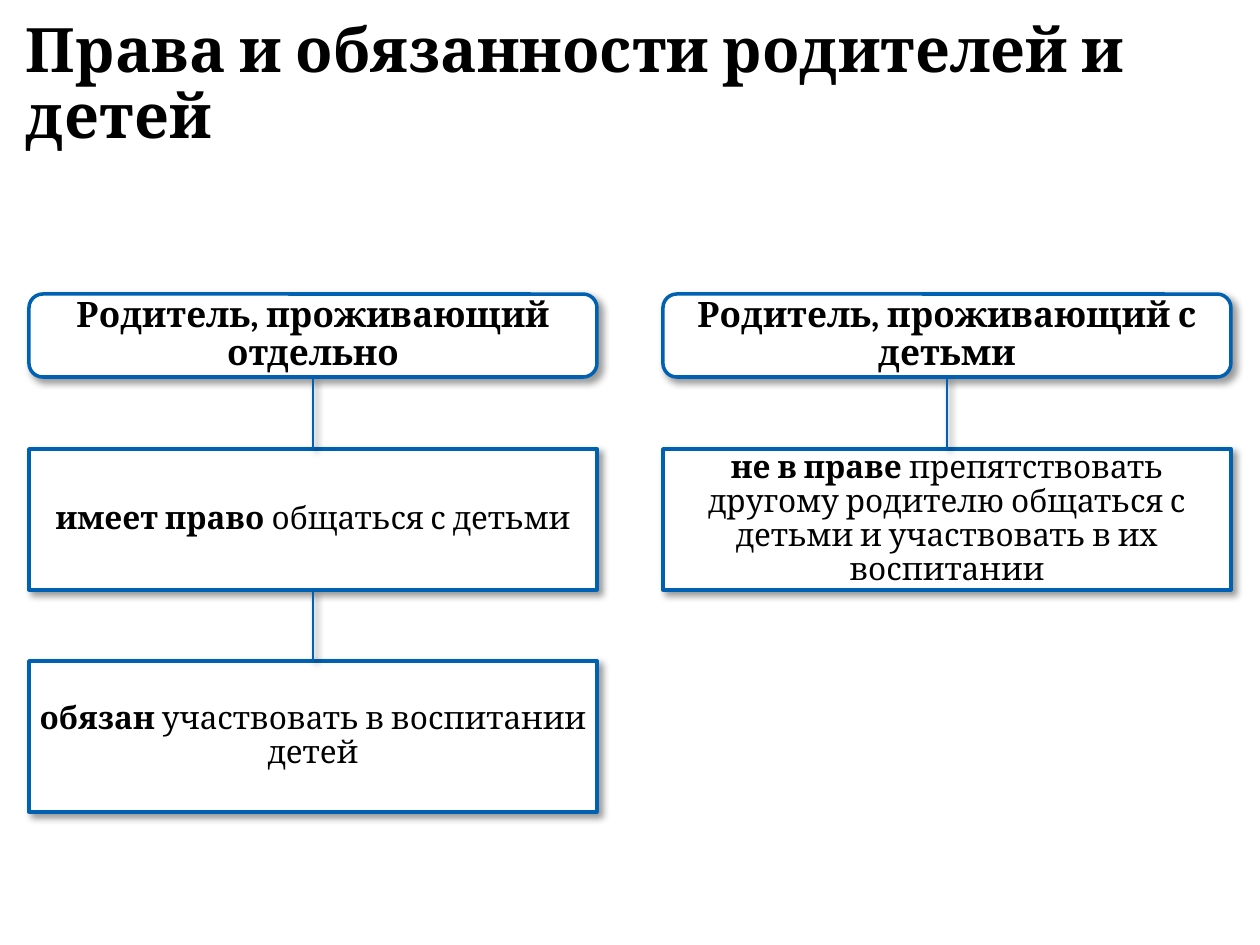
from lxml import etree
from pptx import Presentation
from pptx import util as u
from pptx.dml.color import RGBColor
from pptx.enum import shapes, text
from pptx.oxml.ns import qn

PX = u.Inches(1) / 126
FONT = "Cambria"
COLORS = {"ink": "000000", "border": "0061B2", "card": "FFFFFF"}

CARD_WIDTH = 568
COLUMN_LEFTS = (29, 663)
HEADING_ROW = (294, 83)
ROWS = (HEADING_ROW, (449, 141), (661, 151))

# Each column: a heading, then rules as (bold part, plain part)
COLUMNS = (
    (
        ("Родитель, проживающий отдельно", ""),
        ("имеет право ", "общаться с детьми"),
        ("обязан", " участвовать в воспитании детей"),
    ),
    (
        ("Родитель, проживающий с детьми", ""),
        ("не в праве ", "препятствовать другому родителю общаться "
                        "с детьми и участвовать в их воспитании"),
    ),
)


def px(*lengths):
    return [u.Emu(round(length * PX)) for length in lengths]


def color(name):
    return RGBColor.from_string(COLORS[name])


def add_shadow(effects):
    """Fill an a:effectLst with the soft shadow used by boxes, lines and text."""
    shadow = etree.SubElement(
        effects, qn("a:outerShdw"), blurRad=str(u.Pt(4)), dist=str(u.Pt(3)),
        dir=str(45 * 60000), algn="tl", rotWithShape="0")
    shade = etree.SubElement(shadow, qn("a:srgbClr"), val=COLORS["ink"])
    etree.SubElement(shade, qn("a:alpha"), val="40000")


def style_run(run, size, bold):
    run.font.size = u.Pt(size)
    run.font.bold = bold
    run.font.name = FONT
    run.font.color.rgb = color("ink")
    properties = run.font._element
    effects = etree.Element(qn("a:effectLst"))
    add_shadow(effects)
    properties.find(qn("a:solidFill")).addnext(effects)


def style_line(line, width):
    line.color.rgb = color("border")
    line.width = u.Pt(width)


def add_title(slide, wording):
    title = slide.shapes.title
    title.left, title.top, title.width, title.height = px(26, 13, 1227, 117)
    frame = title.text_frame
    frame.text = wording
    frame.word_wrap = True
    frame.auto_size = text.MSO_AUTO_SIZE.NONE
    frame.vertical_anchor = text.MSO_ANCHOR.TOP
    frame.margin_left = frame.margin_right = 0
    paragraph = frame.paragraphs[0]
    paragraph.alignment = text.PP_ALIGN.LEFT
    paragraph.line_spacing = 0.9
    style_run(paragraph.runs[0], 35, True)


def add_card(slide, left, row, wording):
    is_heading = row == HEADING_ROW
    outline = (shapes.MSO_SHAPE.ROUNDED_RECTANGLE if is_heading
               else shapes.MSO_SHAPE.RECTANGLE)
    top, height = row
    card = slide.shapes.add_shape(outline, *px(left, top, CARD_WIDTH, height))
    card.fill.solid()
    card.fill.fore_color.rgb = color("card")
    style_line(card.line, 2)
    card.shadow.inherit = False
    add_shadow(card._element.spPr.find(qn("a:effectLst")))

    frame = card.text_frame
    frame.word_wrap = True
    frame.vertical_anchor = text.MSO_ANCHOR.MIDDLE
    frame.margin_left, frame.margin_top, frame.margin_right, frame.margin_bottom = px(1, 1, 1, 1)
    paragraph = frame.paragraphs[0]
    paragraph.alignment = text.PP_ALIGN.CENTER
    paragraph.line_spacing = 0.9
    for part, bold in zip(wording, (True, False)):
        if part:
            run = paragraph.add_run()
            run.text = part
            style_run(run, 20 if is_heading else 18, bold)
    return card


def join_cards(slide, upper, lower):
    link = slide.shapes.add_connector(shapes.MSO_CONNECTOR.STRAIGHT, 0, 0, 0, 0)
    link.begin_connect(upper, 2)
    link.end_connect(lower, 0)
    style_line(link.line, 1.5)
    add_shadow(etree.SubElement(link._element.spPr, qn("a:effectLst")))


def add_column(slide, left, wordings):
    cards = [add_card(slide, left, row, wording)
             for row, wording in zip(ROWS, wordings)]
    for upper, lower in zip(cards, cards[1:]):
        join_cards(slide, upper, lower)


def main():
    deck = Presentation()
    deck.slide_width, deck.slide_height = px(1260, 945)
    slide = deck.slides.add_slide(deck.slide_layouts[5])
    add_title(slide, "Права и обязанности родителей и детей")
    for left, wordings in zip(COLUMN_LEFTS, COLUMNS):
        add_column(slide, left, wordings)
    deck.save("out.pptx")


if __name__ == "__main__":
    main()
